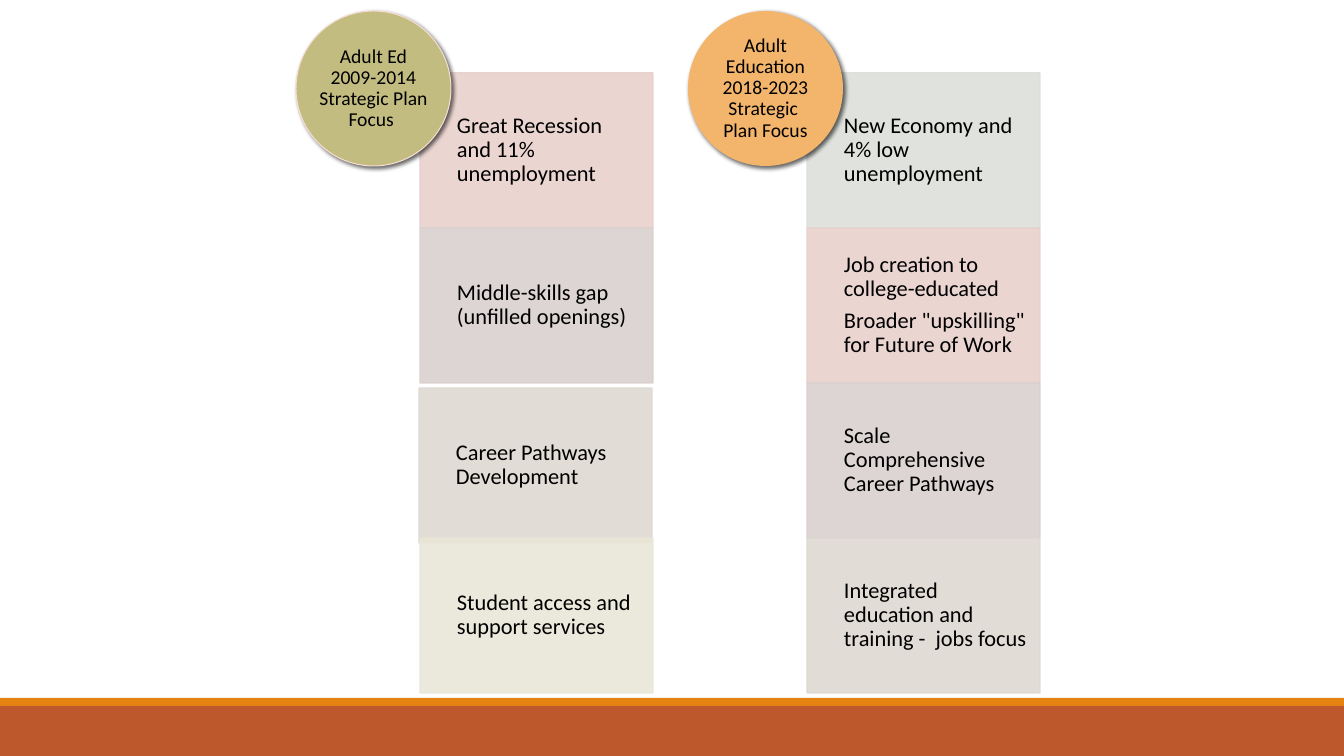
from dataclasses import dataclass

from lxml import etree
from pptx import Presentation
from pptx.dml.color import RGBColor
from pptx.enum.shapes import MSO_SHAPE
from pptx.enum.text import MSO_ANCHOR, PP_ALIGN
from pptx.oxml.ns import qn
from pptx.util import Emu, Pt

RECT = MSO_SHAPE.RECTANGLE
OVAL = MSO_SHAPE.OVAL
MIDDLE = MSO_ANCHOR.MIDDLE
LEFT = PP_ALIGN.LEFT
CENTER = PP_ALIGN.CENTER

EMU_PER_PX = 914400 / 100.8
SLIDE_W, SLIDE_H = 1344, 756
CARD_W, CARD_H = 233, 155
CARD_INDENT, CARD_PAD = 37, 12
BADGE_SIZE, BADGE_RISE = 155, 62
FOOTER_H, STRIPE_H = 50, 8


@dataclass(frozen=True)
class Theme:
    font: str = "Calibri"
    card_size: int = 16
    badge_size: int = 14
    text: str = "000000"
    footer: str = "BD582C"
    stripe: str = "E48312"
    olive: str = "C2BC80"
    olive_edge: str = "F5DDD2"
    orange: str = "F3B56C"
    rose: str = "E8D1CD"
    mauve: str = "D9D1CF"
    sand: str = "DED9D1"
    cream: str = "E9E7D8"
    sage: str = "DCDFDA"


THEME = Theme()


def px(length):
    return Emu(round(length * EMU_PER_PX))


def set_alpha(color_parent, percent):
    for color in color_parent.iter(qn("a:srgbClr")):
        etree.SubElement(color, qn("a:alpha"), val=str(percent * 1000))


def add_shadow(shape):
    effects = shape.element.spPr.find(qn("a:effectLst"))
    shadow = etree.SubElement(effects, qn("a:outerShdw"), blurRad="38100",
                              dist="25400", dir="2700000", rotWithShape="0")
    etree.SubElement(shadow, qn("a:srgbClr"), val="000000")
    set_alpha(shadow, 60)


def add_block(slide, kind, box, fill, edge=None, edge_width=1):
    block = slide.shapes.add_shape(kind, *map(px, box))
    block.fill.solid()
    block.fill.fore_color.rgb = RGBColor.from_string(fill)
    if edge:
        block.line.color.rgb = RGBColor.from_string(edge)
        block.line.width = Pt(edge_width)
    else:
        block.line.fill.background()
    block.shadow.inherit = False
    return block


def write(shape, text, size, align=LEFT, insets=(0, 0, 0, 0)):
    frame = shape.text_frame
    frame.word_wrap = True
    frame.vertical_anchor = MIDDLE
    frame.margin_left, frame.margin_top, frame.margin_right, frame.margin_bottom = map(px, insets)
    frame.text = text
    for paragraph in frame.paragraphs:
        paragraph.alignment = align
        paragraph.line_spacing = 0.9
        paragraph.space_after = Pt(round(size * 0.35, 1))
        paragraph.font.name = THEME.font
        paragraph.font.size = Pt(size)
        paragraph.font.color.rgb = RGBColor.from_string(THEME.text)


def add_footer(slide, left, top, width, height):
    add_block(slide, RECT, (left, top, width, height), THEME.footer)
    add_block(slide, RECT, (left, top - STRIPE_H, width, STRIPE_H), THEME.stripe)


def add_card(slide, left, top, text, fill):
    card = add_block(slide, RECT, (left, top, CARD_W, CARD_H), fill, edge=fill)
    set_alpha(card.element.spPr, 90)
    write(card, text, THEME.card_size, insets=(CARD_INDENT, CARD_PAD, CARD_PAD, CARD_PAD))


def add_badge(slide, left, top, text, fill, edge):
    badge = add_block(slide, OVAL, (left, top, BADGE_SIZE, BADGE_SIZE), fill, edge, 0.75)
    add_shadow(badge)
    write(badge, text, THEME.badge_size, align=CENTER)


def add_plan(slide, left, top, badge_left, badge, cards):
    for row, (text, fill, shift_x, shift_y) in enumerate(cards):
        add_card(slide, left + shift_x, top + row * CARD_H + shift_y, text, fill)
    add_badge(slide, badge_left, top - BADGE_RISE, *badge)


def main():
    deck = Presentation()
    deck.slide_width, deck.slide_height = px(SLIDE_W), px(SLIDE_H)
    slide = deck.slides.add_slide(deck.slide_layouts[6])

    add_footer(slide, 0, SLIDE_H - FOOTER_H, SLIDE_W, FOOTER_H)
    add_plan(
        slide, 420, 73, 296,
        ("Adult Ed 2009-2014 Strategic Plan Focus ", THEME.olive, THEME.olive_edge),
        [
            ("Great Recession and 11% unemployment", THEME.rose, 0, 0),
            ("Middle-skills gap (unfilled openings)", THEME.mauve, 0, 0),
            ("Career Pathways Development", THEME.sand, -1, 5),
            ("Student access and support services", THEME.cream, 0, 0),
        ],
    )
    add_plan(
        slide, 807, 73, 688,
        ("Adult Education 2018-2023 Strategic  Plan Focus", THEME.orange, None),
        [
            ("New Economy and 4% low unemployment", THEME.sage, 0, 0),
            ("Job creation to college-educated\nBroader \"upskilling\" for Future of Work",
             THEME.rose, 0, 0),
            ("Scale Comprehensive Career Pathways", THEME.mauve, 0, 0),
            ("Integrated education and training -  jobs focus", THEME.sand, 0, 0),
        ],
    )
    deck.save("out.pptx")


if __name__ == "__main__":
    main()
